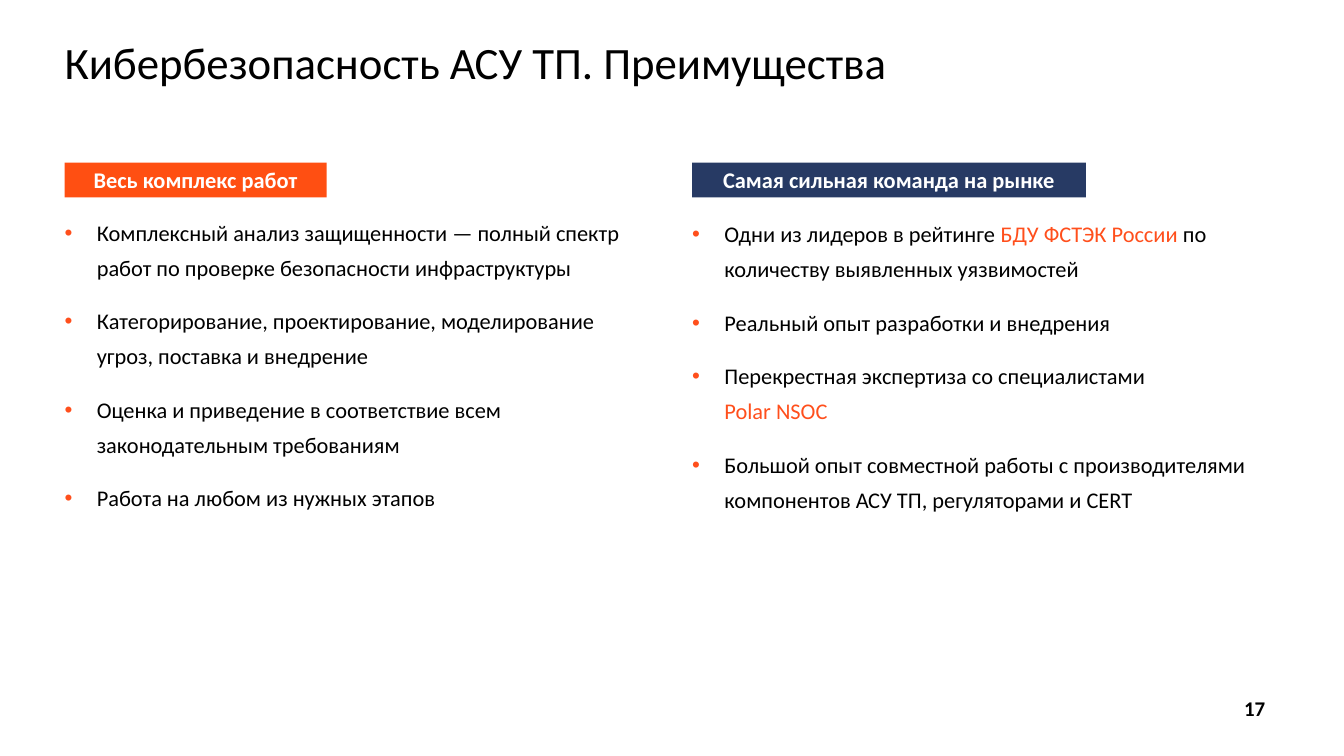
from dataclasses import dataclass

import lxml.etree
import pptx
import pptx.dml.color
import pptx.enum.shapes
import pptx.enum.text
import pptx.oxml.ns
import pptx.util
from pptx.util import Inches

FONT = "Calibri"
BLACK, WHITE, ACCENT = "000000", "FFFFFF", "FF4F1C"
ALIGN = pptx.enum.text.PP_ALIGN
ANCHOR = pptx.enum.text.MSO_ANCHOR


@dataclass
class Span:
    text: str
    color: str = BLACK


@dataclass
class Column:
    heading: str
    fill: str
    left: float
    heading_width: float
    list_top: float
    items: list[list[Span]]


COLUMNS = [
    Column("Весь комплекс работ", "FF4F12", 0.48, 1.95, 1.47, [
        [Span("Комплексный анализ защищенности — полный спектр работ по проверке безопасности инфраструктуры")],
        [Span("Категорирование, проектирование, моделирование угроз, поставка и внедрение")],
        [Span("Оценка и приведение в соответствие всем законодательным требованиям")],
        [Span("Работа на любом из нужных этапов")],
    ]),
    Column("Самая сильная команда на рынке", "273A64", 5.15, 2.93, 1.48, [
        [Span("Одни из лидеров в рейтинге "), Span("БДУ ФСТЭК России ", ACCENT),
         Span("по количеству выявленных уязвимостей")],
        [Span("Реальный опыт разработки и внедрения")],
        [Span("Перекрестная экспертиза со специалистами "), Span("\n"), Span("Polar NSOC", ACCENT)],
        [Span("Большой опыт совместной работы с производителями компонентов АСУ ТП, регуляторами и CERT")],
    ]),
]


def rgb(color: str) -> pptx.dml.color.RGBColor:
    return pptx.dml.color.RGBColor.from_string(color)


def add_span(para, span: Span, size: float = 12, bold: bool = False) -> None:
    if span.text == "\n":
        para.add_line_break()
        return
    run = para.add_run()
    run.text = span.text
    run.font.name = FONT
    run.font.size = pptx.util.Pt(size)
    run.font.bold = bold
    run.font.color.rgb = rgb(span.color)


def set_insets(frame, left: float, top: float) -> None:
    frame.margin_left, frame.margin_top = Inches(left), Inches(top)
    frame.margin_right, frame.margin_bottom = Inches(0.1), Inches(0.05)


def add_bullet(para) -> None:
    properties = para._p.get_or_add_pPr()
    properties.set("marL", str(Inches(0.24)))
    properties.set("indent", str(Inches(-0.24)))
    qn = pptx.oxml.ns.qn
    color = lxml.etree.SubElement(properties, qn("a:buClr"))
    lxml.etree.SubElement(color, qn("a:srgbClr"), val=ACCENT)
    lxml.etree.SubElement(properties, qn("a:buFont"), typeface="Arial")
    lxml.etree.SubElement(properties, qn("a:buChar"), char="•")


def draw_title(page, text: str) -> None:
    title = page.shapes.title
    title.left, title.top = Inches(0.48), Inches(0.25)
    title.width, title.height = Inches(8.99), Inches(0.47)
    frame = title.text_frame
    frame.auto_size = pptx.enum.text.MSO_AUTO_SIZE.NONE
    frame.word_wrap = True
    frame.vertical_anchor = ANCHOR.TOP
    set_insets(frame, 0, 0.05)
    para = frame.paragraphs[0]
    para.alignment = ALIGN.LEFT
    para.line_spacing = 0.9
    add_span(para, Span(text), 24)


def draw_heading(page, column: Column) -> None:
    box = page.shapes.add_shape(
        pptx.enum.shapes.MSO_SHAPE.RECTANGLE, Inches(column.left), Inches(1.21),
        Inches(column.heading_width), Inches(0.26))
    box.shadow.inherit = False
    box.fill.solid()
    box.fill.fore_color.rgb = rgb(column.fill)
    box.line.fill.background()
    box.text_frame.vertical_anchor = ANCHOR.MIDDLE
    para = box.text_frame.paragraphs[0]
    para.alignment = ALIGN.CENTER
    add_span(para, Span(column.heading, WHITE), bold=True)


def draw_list(page, column: Column) -> None:
    box = page.shapes.add_textbox(
        Inches(column.left), Inches(column.list_top), Inches(4.32), Inches(3.24))
    frame = box.text_frame
    frame.word_wrap = True
    set_insets(frame, 0, 0.1)
    for index, item in enumerate(column.items):
        para = frame.add_paragraph() if index else frame.paragraphs[0]
        add_bullet(para)
        para.line_spacing = 1.3
        if index:
            para.space_before = pptx.util.Pt(10)
        for span in item:
            add_span(para, span)


def draw_page_number(page, number: int) -> None:
    box = page.shapes.add_textbox(Inches(9.12), Inches(5.13), Inches(0.43), Inches(0.29))
    box.text_frame.word_wrap = False
    para = box.text_frame.paragraphs[0]
    para.alignment = ALIGN.CENTER
    add_span(para, Span(str(number)), 11.2, bold=True)


def main() -> None:
    deck = pptx.Presentation()
    deck.slide_width = Inches(10)
    deck.slide_height = deck.slide_width * 9 // 16
    page = deck.slides.add_slide(deck.slide_layouts[5])
    draw_title(page, "Кибербезопасность АСУ ТП. Преимущества")
    for column in COLUMNS:
        draw_list(page, column)
        draw_heading(page, column)
    draw_page_number(page, 17)
    deck.save("out.pptx")


if __name__ == "__main__":
    main()
